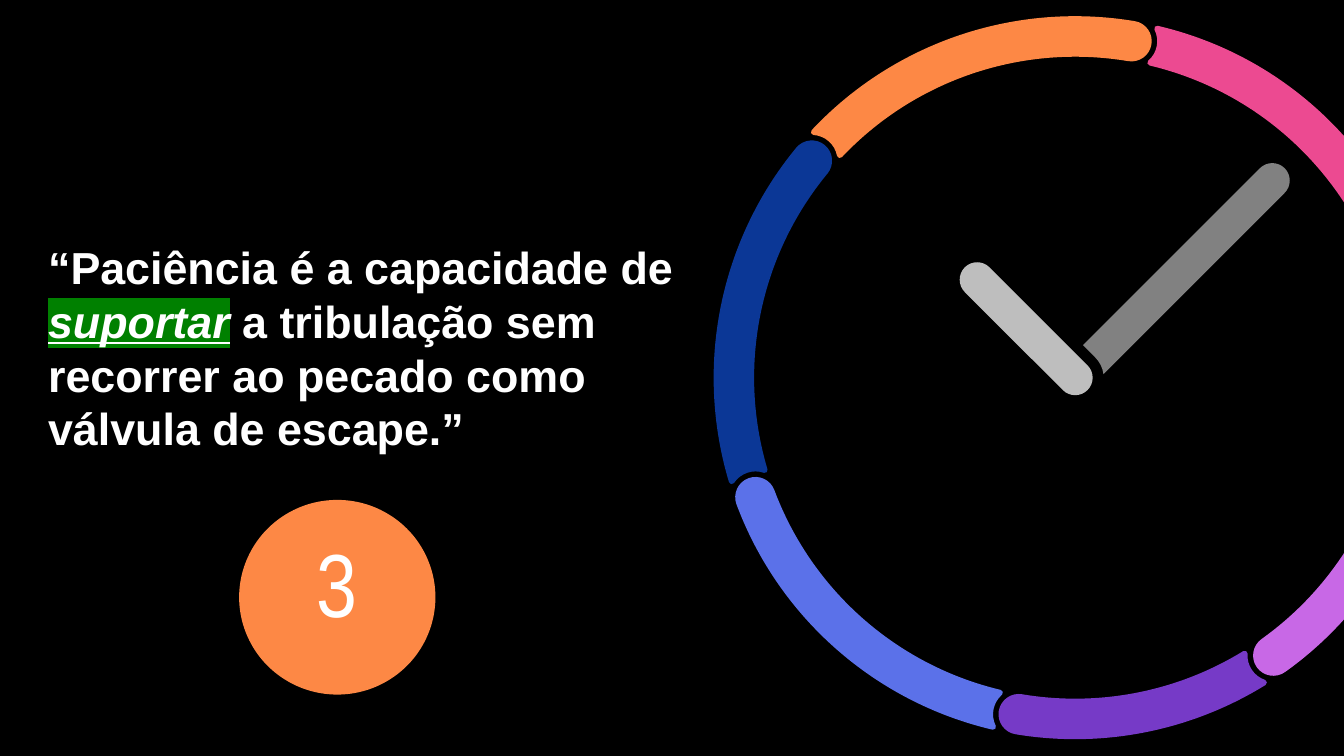
from dataclasses import dataclass
from math import (acos, asin, atan2, ceil, cos, degrees, dist, hypot, radians,
                  sin, tan)

from lxml import etree
from pptx import Presentation
from pptx.dml.color import RGBColor
from pptx.enum.shapes import MSO_SHAPE
from pptx.enum.text import MSO_ANCHOR, PP_ALIGN
from pptx.oxml.ns import qn
from pptx.util import Cm, Pt

OVAL = MSO_SHAPE.OVAL
TOP, MIDDLE = MSO_ANCHOR.TOP, MSO_ANCHOR.MIDDLE
CENTER = PP_ALIGN.CENTER


@dataclass(frozen=True)
class Theme:
    background: str = "000000"
    text: str = "FFFFFF"
    highlight: str = "008000"
    badge: str = "FD8845"
    minute_hand: str = "818181"
    hour_hand: str = "BEBEBE"
    quote_font: str = "Arial"
    number_font: str = "Arial Narrow"
    quote_size: int = 24
    number_size: int = 48
    outline: int = 3


THEME = Theme()

# Colour of each ring segment and the clockwise angle of its round end.
SEGMENTS = [
    ("FD8845", 0),
    ("EC4A91", 90),
    ("C868E6", 135),
    ("763AC7", 180),
    ("5B71E9", 240),
    ("0B3796", 300),
]
RING_TURN = 9.5
BAR_RADIUS = 0.33
NOTCH_RADIUS = 0.54


def rgb(value):
    return RGBColor.from_string(value)


def polar(center, radius, angle):
    """Point at a clockwise angle from twelve o'clock."""
    a = radians(angle)
    return center[0] + radius * sin(a), center[1] - radius * cos(a)


@dataclass(frozen=True)
class Arc:
    center: tuple
    radius: float
    start: float
    end: float

    def samples(self, steps=24):
        return [polar(self.center, self.radius,
                      self.start + (self.end - self.start) * i / steps)
                for i in range(steps + 1)]

    def curves(self):
        """Cubic curves of at most a quarter turn, as point triples."""
        count = ceil(abs(self.end - self.start) / 90)
        for i in range(count):
            step = (self.end - self.start) / count
            a, b = self.start + step * i, self.start + step * (i + 1)
            pull = 4 / 3 * tan(radians(step) / 4)
            reach = self.radius * hypot(1, pull)
            lean = degrees(atan2(pull, 1))
            yield (polar(self.center, reach, a + lean),
                   polar(self.center, reach, b - lean),
                   polar(self.center, self.radius, b))


def add_outline(slide, arcs, color):
    """Closed, filled shape bounded by arcs, with lines between their ends."""
    corners = [(Cm(x), Cm(y)) for arc in arcs for x, y in arc.samples()]
    builder = slide.shapes.build_freeform(*corners[0])
    builder.add_line_segments(corners[1:], close=True)
    sp = builder.convert_to_shape()
    outline = next(sp._element.iter(qn("a:path")))
    for command in list(outline):
        outline.remove(command)

    def draw(name, points):
        command = etree.SubElement(outline, qn(name))
        for x, y in points:
            etree.SubElement(command, qn("a:pt"), x=str(Cm(x) - sp.left),
                             y=str(Cm(y) - sp.top))

    pen = None
    for arc in arcs:
        begin = polar(arc.center, arc.radius, arc.start)
        if pen is None:
            draw("a:moveTo", [begin])
        elif dist(pen, begin) > 0.01:
            draw("a:lnTo", [begin])
        for curve in arc.curves():
            draw("a:cubicBezTo", curve)
        pen = polar(arc.center, arc.radius, arc.end)
    draw("a:close", [])

    sp.shadow.inherit = False
    sp.fill.solid()
    sp.fill.fore_color.rgb = rgb(color)
    sp.line.fill.background()
    return sp


def segment_arcs(hub, middle, tail, cap):
    """Ring bar with a round end at cap, hollowed around the one at tail."""
    outer, inner = middle + BAR_RADIUS, middle - BAR_RADIUS

    def tail_angle(radius):
        return tail + degrees(acos((radius**2 + middle**2 - NOTCH_RADIUS**2)
                                   / (2 * radius * middle)))

    def notch_angle(radius):
        return tail + degrees(acos((radius**2 - middle**2 - NOTCH_RADIUS**2)
                                   / (2 * middle * NOTCH_RADIUS)))

    return [Arc(hub, outer, tail_angle(outer), cap),
            Arc(polar(hub, middle, cap), BAR_RADIUS, cap, cap + 180),
            Arc(hub, inner, cap, tail_angle(inner)),
            Arc(polar(hub, middle, tail), NOTCH_RADIUS,
                notch_angle(inner), notch_angle(outer))]


def add_ring(slide, hub, middle):
    hub_x, hub_y = Cm(hub[0]), Cm(hub[1])
    turn = radians(RING_TURN)
    for i, (color, cap) in enumerate(SEGMENTS):
        tail = SEGMENTS[i - 1][1]
        end = cap if cap > tail else cap + 360
        sp = add_outline(slide, segment_arcs(hub, middle, tail, end), color)
        sp.line.color.rgb = rgb(color)
        sp.line.width = Pt(THEME.outline)
        etree.SubElement(sp.line._get_or_add_ln(), qn("a:round"))
        # Carry the segment's middle around the hub, then turn it in place.
        dx = sp.left + sp.width / 2 - hub_x
        dy = sp.top + sp.height / 2 - hub_y
        sp.left = round(hub_x + dx * cos(turn) - dy * sin(turn) - sp.width / 2)
        sp.top = round(hub_y + dx * sin(turn) + dy * cos(turn) - sp.height / 2)
        sp.rotation = RING_TURN


def add_hands(slide, hub, minute_length, hour_length):
    angle = 45
    edge = angle + degrees(asin(BAR_RADIUS / NOTCH_RADIUS))
    corner = angle - degrees(atan2(BAR_RADIUS, NOTCH_RADIUS))
    tip = polar(hub, minute_length, angle)
    add_outline(slide, [
        Arc(tip, BAR_RADIUS, angle - 90, angle + 90),
        Arc(hub, NOTCH_RADIUS, edge, angle),
        Arc(hub, hypot(NOTCH_RADIUS, BAR_RADIUS), corner, corner),
    ], THEME.minute_hand)

    angle = -45
    tip = polar(hub, hour_length, angle)
    add_outline(slide, [
        Arc(tip, BAR_RADIUS, angle - 90, angle + 90),
        Arc(hub, BAR_RADIUS, angle + 90, angle + 270),
    ], THEME.hour_hand)


def add_clock(slide, left, top, size):
    hub = left + size / 2, top + size / 2
    add_ring(slide, hub, size / 2 - BAR_RADIUS)
    add_hands(slide, hub, minute_length=5.27, hour_length=2.62)


def add_quote(slide, left, top, width, height):
    sp = slide.shapes.add_textbox(Cm(left), Cm(top), Cm(width), Cm(height))
    tf = sp.text_frame
    tf.word_wrap = True
    tf.vertical_anchor = MIDDLE
    tf.margin_left = tf.margin_right = tf.margin_top = Cm(0.25)
    tf.margin_bottom = Cm(1.25)
    p = tf.paragraphs[0]
    p.font.name = THEME.quote_font
    p.font.size = Pt(THEME.quote_size)
    p.font.bold = True
    p.font.color.rgb = rgb(THEME.text)
    p.add_run().text = "“Paciência é a capacidade de "
    r = p.add_run()
    r.text = "suportar"
    r.font.italic = True
    r.font.underline = True
    mark = etree.SubElement(r.font._element, qn("a:highlight"))
    etree.SubElement(mark, qn("a:srgbClr"), val=THEME.highlight)
    p.add_run().text = (" a tribulação sem recorrer ao pecado"
                        " como válvula de escape.”")


def add_badge(slide, left, top, width, height, number):
    sp = slide.shapes.add_shape(OVAL, Cm(left), Cm(top), Cm(width), Cm(height))
    sp.shadow.inherit = False
    sp.fill.solid()
    sp.fill.fore_color.rgb = rgb(THEME.badge)
    sp.line.fill.background()
    tf = sp.text_frame
    tf.vertical_anchor = TOP
    tf.margin_left = tf.margin_right = tf.margin_top = tf.margin_bottom = 0
    p = tf.paragraphs[0]
    p.text = number
    p.alignment = CENTER
    p.font.name = THEME.number_font
    p.font.size = Pt(THEME.number_size)
    p.font.color.rgb = rgb(THEME.text)


def main():
    prs = Presentation()
    prs.slide_width, prs.slide_height = Cm(25.4), Cm(14.29)
    slide = prs.slides.add_slide(prs.slide_layouts[6])
    slide.background.fill.solid()
    slide.background.fill.fore_color.rgb = rgb(THEME.background)
    add_quote(slide, 0.66, 3.71, 12.62, 6.71)
    add_clock(slide, 13.54, 0.36, 13.56)
    add_badge(slide, 4.52, 9.45, 3.71, 3.68, "3")
    prs.save("out.pptx")


if __name__ == "__main__":
    main()
